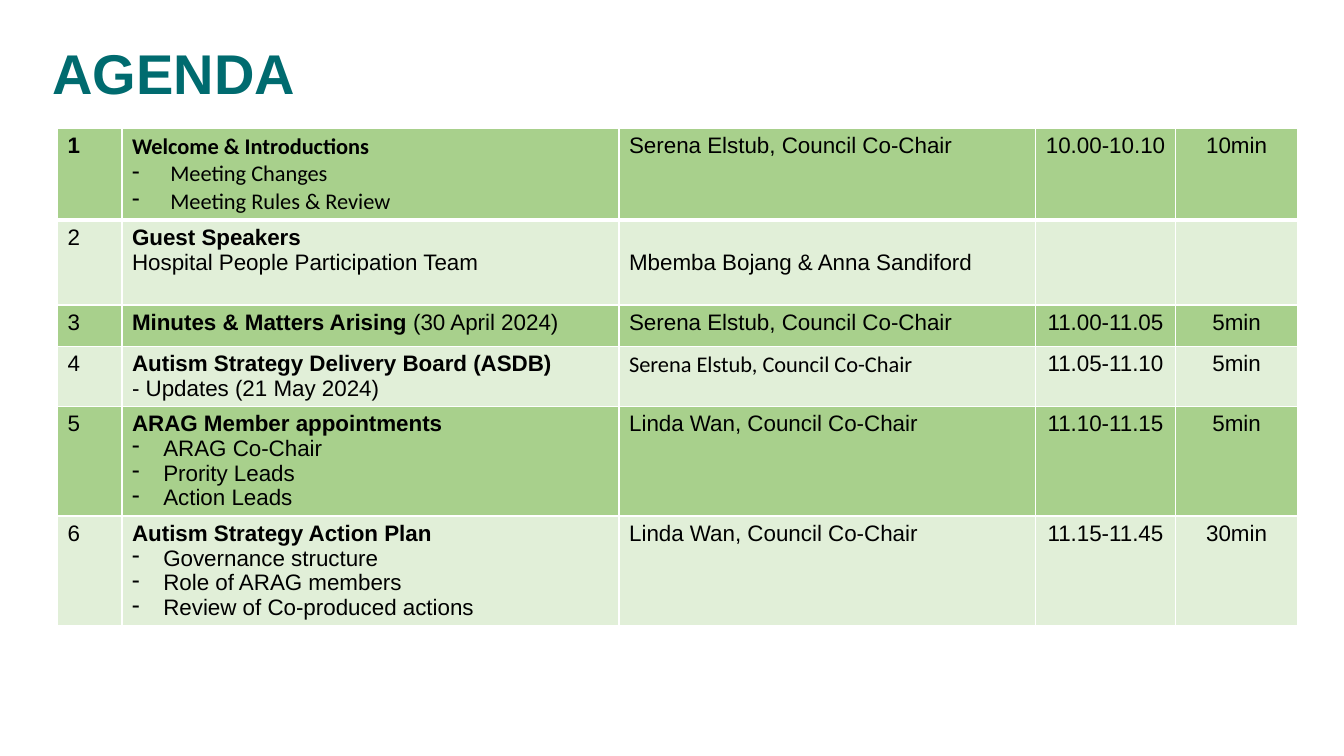
from dataclasses import dataclass

from lxml import etree
from pptx import Presentation
from pptx.dml.color import RGBColor
from pptx.enum.text import MSO_ANCHOR, MSO_AUTO_SIZE, PP_ALIGN
from pptx.oxml.ns import qn
from pptx.util import Inches, Pt

LEFT = PP_ALIGN.LEFT
CENTER = PP_ALIGN.CENTER
BOTTOM = MSO_ANCHOR.BOTTOM
NO_AUTOFIT = MSO_AUTO_SIZE.NONE

TEAL = "006B6F"
BLACK = "000000"
WHITE = "FFFFFF"
BAND_FILLS = ("A8D08C", "E1EFD8")

COLUMN_WIDTHS = (0.64, 4.93, 4.13, 1.39, 1.21)
SERENA = "Serena Elstub, Council Co-Chair"
LINDA = "Linda Wan, Council Co-Chair"


@dataclass
class AgendaItem:
    height: float
    heading: str
    owner: str
    time: str = ""
    duration: str = ""
    heading_note: str = ""
    detail: str = ""
    bullets: tuple = ()
    bullet_indent: float = 0.31
    bold_number: bool = False
    topic_font: str = "Arial"
    owner_font: str = "Arial"
    owner_top: float = 0.05


AGENDA = (
    AgendaItem(0.91, "Welcome & Introductions", SERENA, "10.00-10.10", "10min",
               bullets=("Meeting Changes", "Meeting Rules & Review"),
               bullet_indent=0.38, bold_number=True, topic_font="Calibri"),
    AgendaItem(0.84, "Guest Speakers", "Mbemba Bojang & Anna Sandiford",
               detail="Hospital People Participation Team", owner_top=0.3),
    AgendaItem(0.41, "Minutes & Matters Arising ", SERENA, "11.00-11.05", "5min",
               heading_note="(30 April 2024)"),
    AgendaItem(0.59, "Autism Strategy Delivery Board (ASDB)", SERENA,
               "11.05-11.10", "5min", detail="- Updates (21 May 2024)",
               owner_font="Calibri"),
    AgendaItem(1.09, "ARAG Member appointments", LINDA, "11.10-11.15", "5min",
               bullets=("ARAG Co-Chair", "Prority Leads", "Action Leads")),
    AgendaItem(1.08, "Autism Strategy Action Plan", LINDA, "11.15-11.45", "30min",
               bullets=("Governance structure", "Role of ARAG members",
                        "Review of Co-produced actions")),
)


def color(value):
    return RGBColor.from_string(value)


def format_font(font, name="Arial", size=16, bold=False, fill=BLACK):
    font.name = name
    font.size = Pt(size)
    font.bold = bold
    font.color.rgb = color(fill)


def add_bullet(paragraph, indent):
    properties = paragraph._p.get_or_add_pPr()
    properties.set("marL", str(Inches(indent)))
    properties.set("indent", str(Inches(-indent)))
    bullet_color = etree.SubElement(properties, qn("a:buClr"))
    etree.SubElement(bullet_color, qn("a:srgbClr"), val=BLACK)
    etree.SubElement(properties, qn("a:buChar"), char="-")


def style_cell(cell, fill, bottom_width):
    properties = cell._tc.get_or_add_tcPr()
    for side, width in (("L", 1), ("R", 1), ("T", 1), ("B", bottom_width)):
        line = etree.SubElement(properties, qn(f"a:ln{side}"), w=str(Pt(width)))
        line_fill = etree.SubElement(line, qn("a:solidFill"))
        etree.SubElement(line_fill, qn("a:srgbClr"), val=WHITE)
    cell.fill.solid()
    cell.fill.fore_color.rgb = color(fill)


def write_cell(cell, text, alignment=LEFT, font_name="Arial", bold=False):
    paragraph = cell.text_frame.paragraphs[0]
    paragraph.text = text
    paragraph.alignment = alignment
    format_font(paragraph.font, font_name, bold=bold)
    for run in paragraph.runs:
        format_font(run.font, font_name, bold=bold)


def write_topic(cell, item):
    write_cell(cell, item.heading, font_name=item.topic_font, bold=True)
    if item.heading_note:
        note = cell.text_frame.paragraphs[0].add_run()
        note.text = item.heading_note
        format_font(note.font, item.topic_font)
    details = (item.detail,) if item.detail else item.bullets
    for text in details:
        paragraph = cell.text_frame.add_paragraph()
        paragraph.text = text
        if item.bullets:
            add_bullet(paragraph, item.bullet_indent)
        format_font(paragraph.runs[0].font, item.topic_font)


def add_title(slide, left, top, width, height):
    title = slide.shapes.title
    title.left, title.top = Inches(left), Inches(top)
    title.width, title.height = Inches(width), Inches(height)
    frame = title.text_frame
    frame.text = "AGENDA"
    frame.auto_size = NO_AUTOFIT
    frame.vertical_anchor = BOTTOM
    paragraph = frame.paragraphs[0]
    paragraph.alignment = LEFT
    paragraph.line_spacing = 0.9
    format_font(paragraph.runs[0].font, size=40, bold=True, fill=TEAL)


def add_agenda(slide, left, top, width):
    height = sum(item.height for item in AGENDA)
    table = slide.shapes.add_table(
        len(AGENDA), len(COLUMN_WIDTHS),
        Inches(left), Inches(top), Inches(width), Inches(height)).table
    table.first_row = False
    table.horz_banding = False
    for column, column_width in zip(table.columns, COLUMN_WIDTHS):
        column.width = Inches(column_width)
    for index, (row, item) in enumerate(zip(table.rows, AGENDA)):
        row.height = Inches(item.height)
        for cell in row.cells:
            style_cell(cell, BAND_FILLS[index % 2], 3 if index == 0 else 1)
        number, topic, owner, time, duration = row.cells
        write_cell(number, str(index + 1), bold=item.bold_number)
        write_topic(topic, item)
        write_cell(owner, item.owner, font_name=item.owner_font)
        owner.margin_top = Inches(item.owner_top)
        write_cell(time, item.time, CENTER)
        write_cell(duration, item.duration, CENTER)


def main():
    presentation = Presentation()
    presentation.slide_width = Inches(13.33)
    presentation.slide_height = Inches(7.5)
    slide = presentation.slides.add_slide(presentation.slide_layouts[5])
    add_title(slide, 0.42, 0.3, 10, 0.81)
    add_agenda(slide, 0.57, 1.27, sum(COLUMN_WIDTHS))
    presentation.save("out.pptx")


if __name__ == "__main__":
    main()
